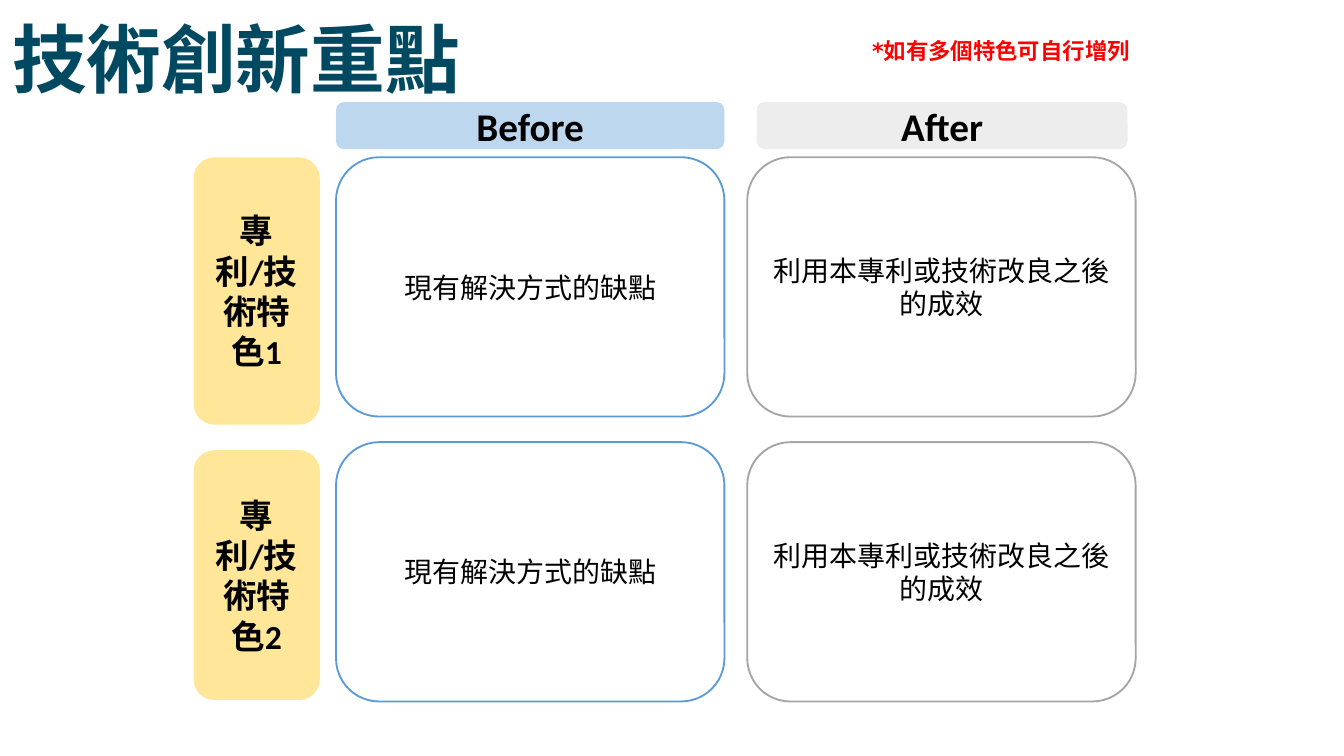
"""Builds a before/after comparison slide of technical innovation highlights."""
from pptx import Presentation
from pptx import util as u
from pptx.dml import color
from pptx.enum import shapes, text

COLORS = {
    "title": "004961", "ink": "000000", "note": "FF0000", "white": "FFFFFF",
    "before_head": "BDD7EE", "after_head": "EDEDED", "feature": "FFE699",
    "before_line": "5B9BD5", "after_line": "A5A5A5",
}
COLUMNS = [
    ("Before", "現有解決方式的缺點", "before", 2.5, 2.5, 2.89, None),
    ("After", "利用本專利或技術改良之後的成效", "after", 5.56, 5.63, 2.76, "white"),
]
FEATURES = [("專利/技術特色1", 1.17, 1.17, 1.99), ("專利/技術特色2", 3.29, 3.35, 1.86)]


def rgb(name):
    """Return the named colour."""
    return color.RGBColor.from_string(COLORS[name])


def write(frame, wording, size, ink="ink", bold=False, font="Calibri",
          align=text.PP_ALIGN.CENTER):
    """Put one formatted paragraph into a text frame."""
    frame.text = wording
    paragraph = frame.paragraphs[0]
    paragraph.alignment = align
    run_font = paragraph.runs[0].font
    run_font.name, run_font.size, run_font.bold = font, u.Pt(size), bold
    run_font.color.rgb = rgb(ink)


def add_card(slide, box, wording, size, fill=None, line=None, bold=False):
    """Add a rounded card with centred text in the given box."""
    card = slide.shapes.add_shape(
        shapes.MSO_SHAPE.ROUNDED_RECTANGLE, *map(u.Inches, box))
    card.shadow.inherit = False
    if fill:
        card.fill.solid()
        card.fill.fore_color.rgb = rgb(fill)
    else:
        card.fill.background()
    if line:
        card.line.color.rgb = rgb(line)
        card.line.width = u.Pt(1)
    else:
        card.line.fill.background()
    card.text_frame.word_wrap = True
    card.text_frame.vertical_anchor = text.MSO_ANCHOR.MIDDLE
    write(card.text_frame, wording, size, bold=bold)


def add_title(slide, box):
    """Place and format the title placeholder in the given box."""
    title = slide.shapes.title
    title.left, title.top, title.width, title.height = map(u.Inches, box)
    frame = title.text_frame
    frame.auto_size = text.MSO_AUTO_SIZE.NONE
    frame.vertical_anchor = text.MSO_ANCHOR.MIDDLE
    frame.margin_left = frame.margin_right = u.Inches(0.09)
    frame.margin_top = frame.margin_bottom = u.Inches(0.04)
    write(frame, "技術創新重點", 40, "title", True, align=text.PP_ALIGN.LEFT)
    frame.paragraphs[0].line_spacing = 0.9


def add_note(slide, box):
    """Add the red hint about further features in the given box."""
    frame = slide.shapes.add_textbox(*map(u.Inches, box)).text_frame
    frame.word_wrap = False
    frame.auto_size = text.MSO_AUTO_SIZE.SHAPE_TO_FIT_TEXT
    write(frame, "*如有多個特色可自行增列", 12, "note", True, "DejaVu Sans",
          text.PP_ALIGN.LEFT)


def add_comparison(slide, left, top):
    """Add headings, feature labels and cells from the given corner."""
    x, y = left - 1.44, top - 0.76
    for heading, _, side, _, head_left, head_width, _ in COLUMNS:
        add_card(slide, (x + head_left, top, head_width, 0.35), heading, 21,
                 f"{side}_head", bold=True)
    for feature, _, label_top, label_height in FEATURES:
        add_card(slide, (left, y + label_top, 0.94, label_height), feature, 18,
                 "feature", bold=True)
    for _, wording, side, cell_left, _, _, fill in COLUMNS:
        for _, cell_top, _, _ in FEATURES:
            add_card(slide, (x + cell_left, y + cell_top, 2.89, 1.93), wording, 15,
                     fill, f"{side}_line")


def main():
    """Build and save the slide."""
    deck = Presentation()
    deck.slide_width = u.Inches(10)
    deck.slide_height = deck.slide_width * 9 // 16
    slide = deck.slides.add_slide(deck.slide_layouts.get_by_name("Title Only"))
    add_title(slide, (0, 0.1, 8.62, 0.74))
    add_comparison(slide, 1.44, 0.76)
    add_note(slide, (6.39, 0.23, 2.17, 0.3))
    deck.save("out.pptx")


if __name__ == "__main__":
    main()
